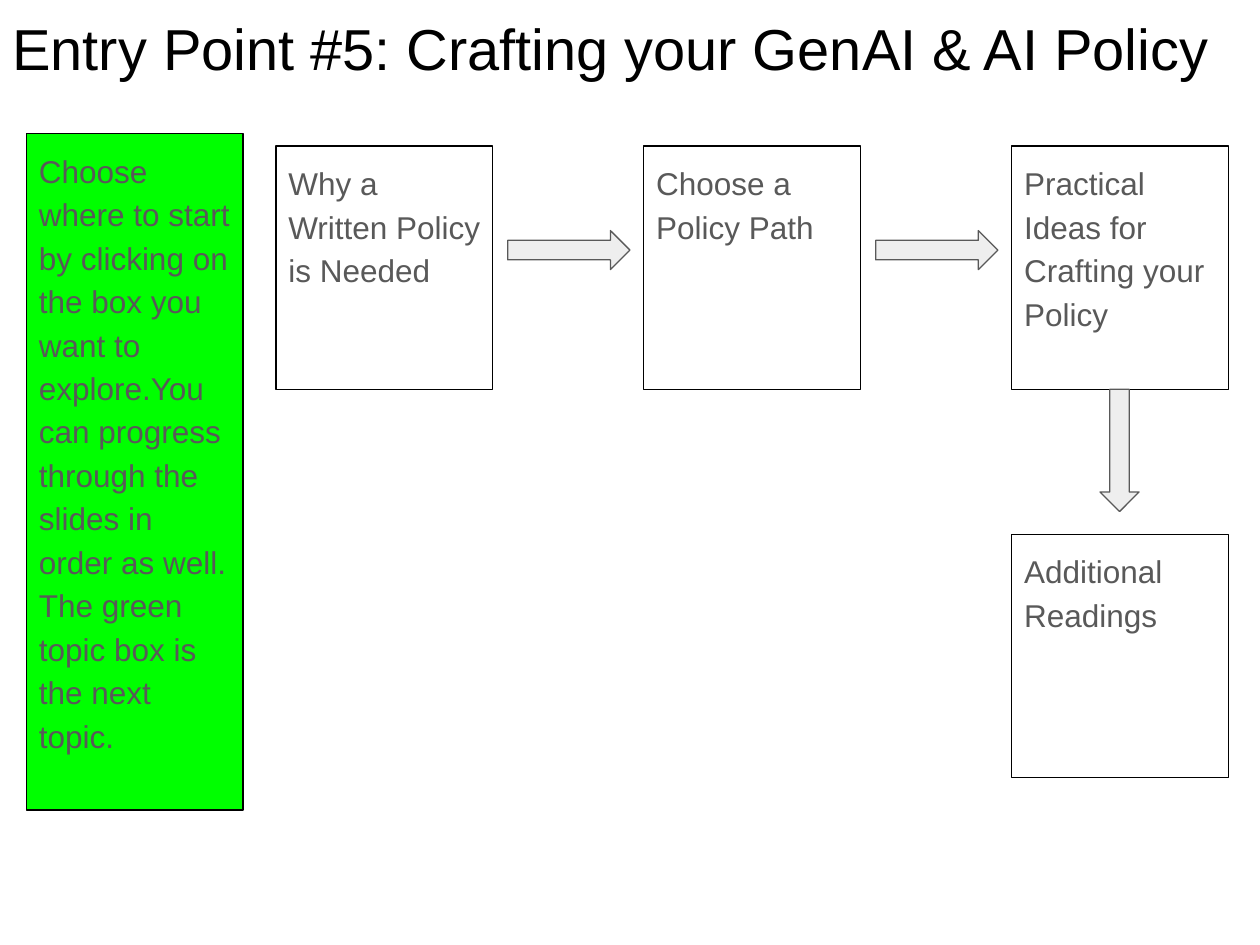
from typing import NamedTuple

from pptx import Presentation
from pptx.dml.color import RGBColor as Rgb
from pptx.enum.shapes import MSO_SHAPE as Shape
from pptx.enum.text import MSO_ANCHOR as Anchor, MSO_AUTO_SIZE as Fit, PP_ALIGN as Align
from pptx.util import Inches, Pt

COLORS = {"ink": "000000", "text": "595959", "green": "00FF00", "gray": "EEEEEE"}

# Grid: three columns, two rows
COLS = [2.19 + 2.92 * i for i in range(3)]
TOP, LOW = 1.16, 4.24
WIDE, HIGH = 1.72, 1.93


class Box(NamedTuple):
    text: str
    left: float
    top: float
    high: float = HIGH
    fill: str = ""


class Arrow(NamedTuple):
    left: float
    top: float
    turn: int = 0


BOXES = [
    Box("Choose where to start by clicking on the box you want to explore.You can "
        "progress through the slides in order as well. The green topic box is the "
        "next topic.", 0.21, 1.06, 5.37, "green"),
    Box("Why a Written Policy is Needed", COLS[0], TOP),
    Box("Choose a Policy Path", COLS[1], TOP),
    Box("Practical Ideas for Crafting your Policy", COLS[2], TOP),
    Box("Additional Readings", COLS[2], LOW),
]
ARROWS = [Arrow(col + 1.84, 1.83) for col in COLS[:2]] + [Arrow(8.4, 3.42, 90)]


def color(name: str) -> Rgb:
    return Rgb.from_string(COLORS[name])


def add_form(slide, kind, left: float, top: float, wide: float, high: float,
             fill: str, line: str):
    form = slide.shapes.add_shape(kind, *map(Inches, (left, top, wide, high)))
    form.shadow.inherit = False
    if fill:
        form.fill.solid()
        form.fill.fore_color.rgb = color(fill)
    else:
        form.fill.background()
    form.line.color.rgb = color(line)
    form.line.width = Pt(0.75)
    return form


def set_text(form, text: str, size: int, tone: str, **style) -> None:
    frame = form.text_frame
    inset = Inches(0.1)
    layout = {"word_wrap": True, "vertical_anchor": Anchor.TOP,
              "margin_left": inset, "margin_right": inset,
              "margin_top": inset, "margin_bottom": inset}
    for key, value in layout.items():
        setattr(frame, key, value)
    para = frame.paragraphs[0]
    for key, value in {"alignment": Align.LEFT, **style}.items():
        setattr(para, key, value)
    run = para.add_run()
    run.text = text
    for key, value in {"name": "Arial", "size": Pt(size)}.items():
        setattr(run.font, key, value)
    run.font.color.rgb = color(tone)


def add_box(slide, box: Box) -> None:
    form = add_form(slide, Shape.RECTANGLE, box.left, box.top, WIDE, box.high,
                    box.fill, "ink")
    set_text(form, box.text, 18, "text", line_spacing=1.15, space_after=Pt(12))


def add_arrow(slide, arrow: Arrow) -> None:
    form = add_form(slide, Shape.RIGHT_ARROW, arrow.left, arrow.top, 0.97, 0.31,
                    "gray", "text")
    form.rotation = arrow.turn


def main() -> None:
    deck = Presentation()
    deck.slide_width, deck.slide_height = Inches(10), Inches(7.5)
    slide = deck.slides.add_slide(deck.slide_layouts[6])

    # Topic boxes and the arrows between them
    for box in BOXES:
        add_box(slide, box)
    for arrow in ARROWS:
        add_arrow(slide, arrow)

    # Title
    title = slide.shapes.add_textbox(0, 0, Inches(9.75), Inches(0.76))
    set_text(title, "Entry Point #5: Crafting your GenAI & AI Policy", 33, "ink")
    title.text_frame.auto_size = Fit.SHAPE_TO_FIT_TEXT

    deck.save("out.pptx")


if __name__ == "__main__":
    main()
